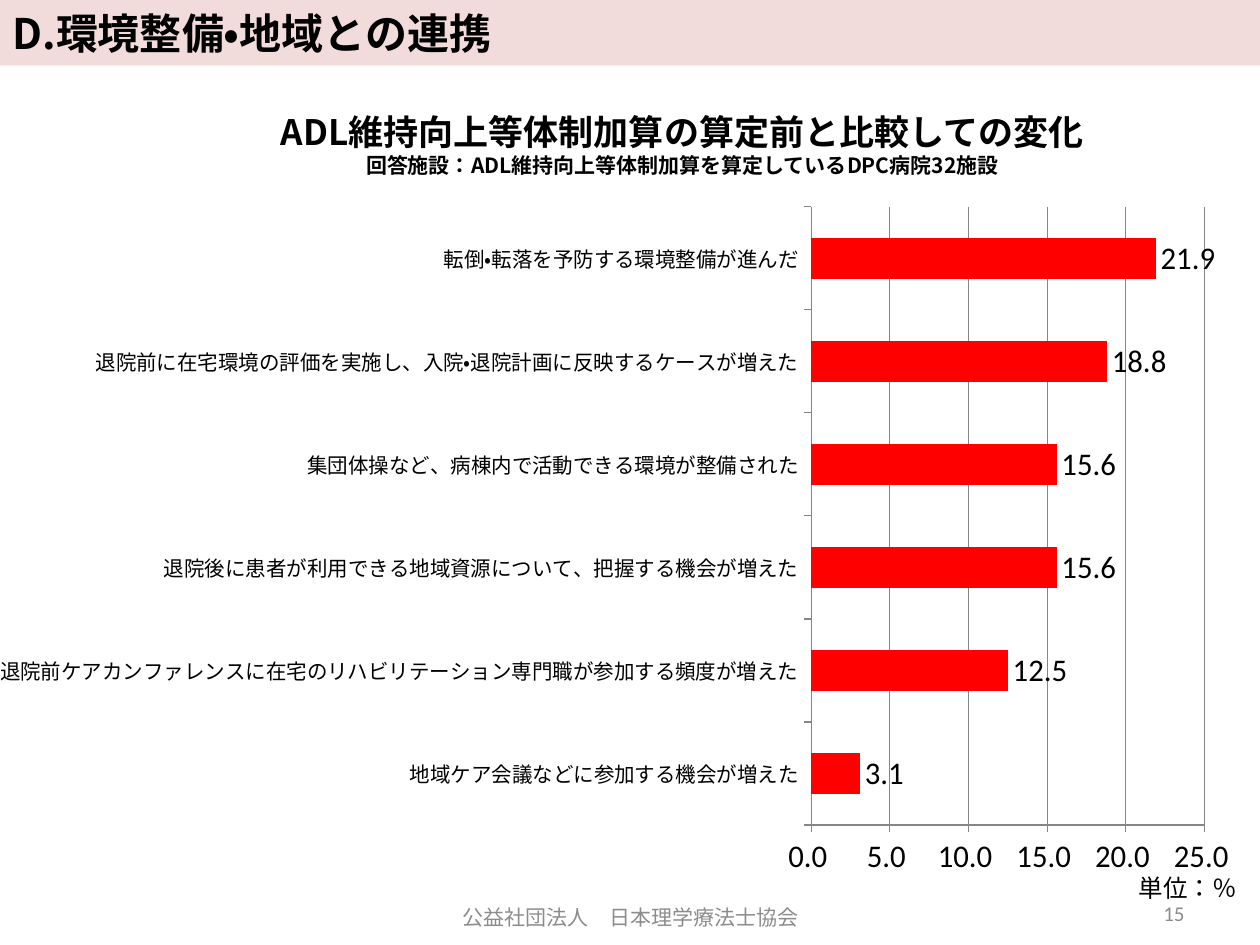
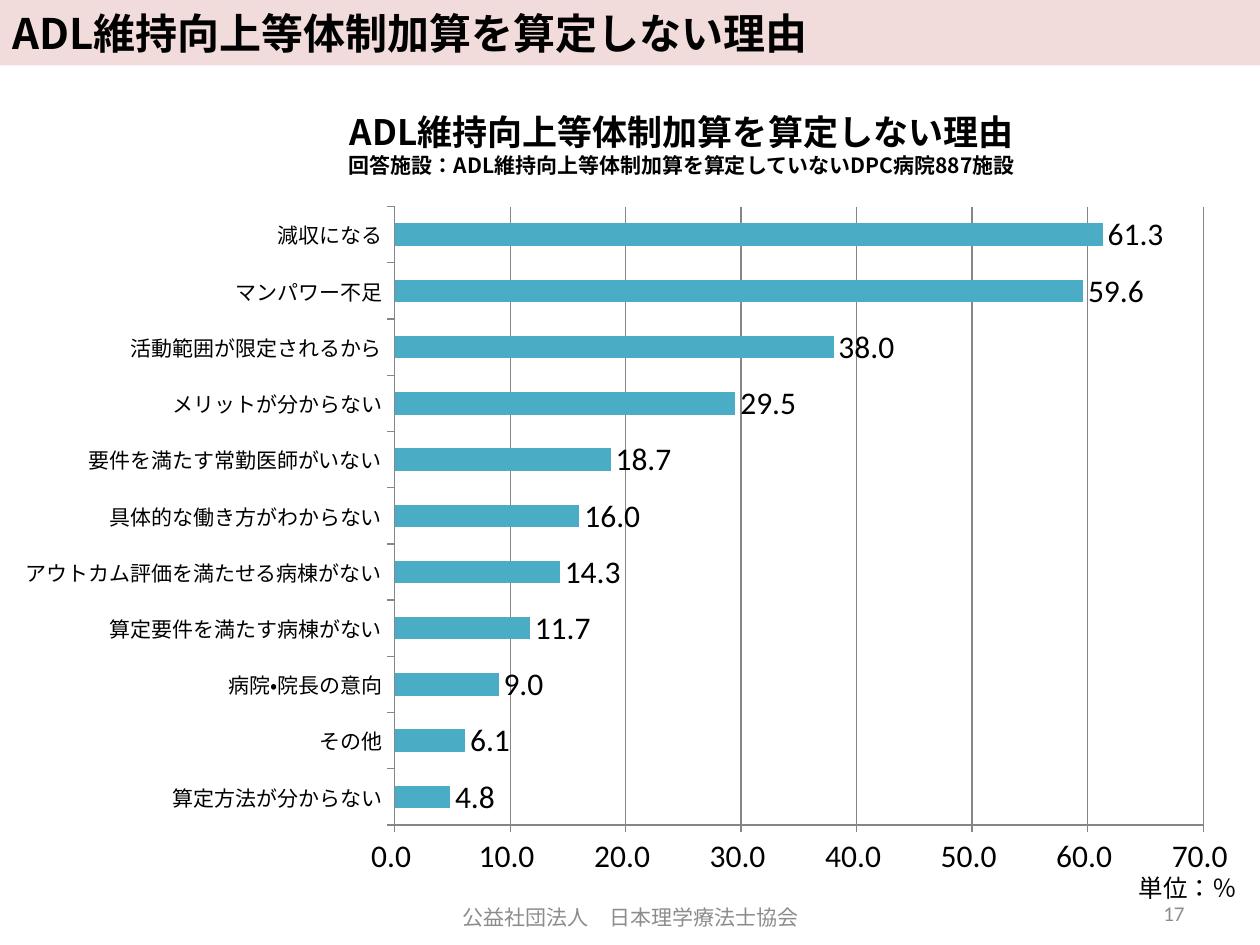
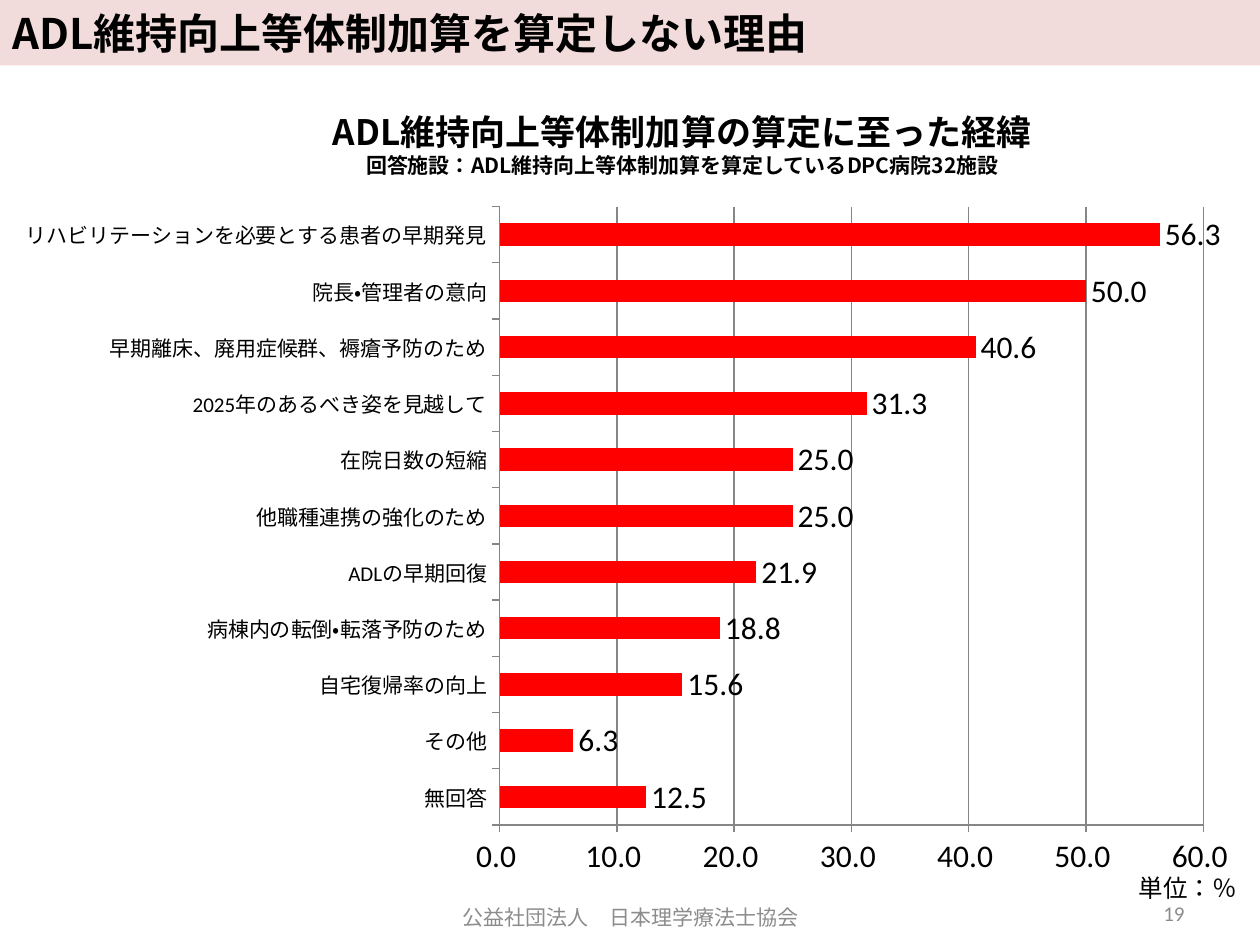
import dataclasses

import pptx
import pptx.chart.data
import pptx.dml.color
import pptx.enum.chart
import pptx.enum.lang
import pptx.enum.shapes
import pptx.enum.text
import pptx.util

Inches = pptx.util.Inches
Align = pptx.enum.text.PP_ALIGN
Anchor = pptx.enum.text.MSO_ANCHOR


@dataclasses.dataclass(frozen=True)
class Theme:
    band: str = "F2DCDB"
    ink: str = "000000"
    muted: str = "8C8C8C"
    grid: str = "868686"
    adopters: str = "FF0000"
    non_adopters: str = "4BACC6"
    heading_font: str = "Noto Sans CJK JP"
    body_font: str = "Calibri"
    title_size: int = 24
    heading_size: int = 20
    chart_size: int = 18
    unit_size: int = 14
    small_size: int = 12


THEME = Theme()
NUMBER_FORMAT = "0.0_ "
UNIT = "単位：％"
FOOTER = "公益社団法人　日本理学療法士協会"
ADOPTERS = "回答施設：ADL維持向上等体制加算を算定しているDPC病院32施設"
NON_ADOPTERS = "回答施設：ADL維持向上等体制加算を算定していないDPC病院887施設"

SLIDES = [
    {
        "title": "D.環境整備・地域との連携",
        "heading": "ADL維持向上等体制加算の算定前と比較しての変化",
        "respondents": ADOPTERS,
        "heading_span": (2.07, 6.69),
        "number": 15,
        "color": THEME.adopters,
        "answers": [
            ("転倒・転落を予防する環境整備が進んだ", 21.9),
            ("退院前に在宅環境の評価を実施し、入院・退院計画に反映するケースが増えた", 18.8),
            ("集団体操など、病棟内で活動できる環境が整備された", 15.6),
            ("退院後に患者が利用できる地域資源について、把握する機会が増えた", 15.6),
            ("退院前ケアカンファレンスに在宅のリハビリテーション専門職が参加する頻度が増えた", 12.5),
            ("地域ケア会議などに参加する機会が増えた", 3.1),
        ],
    },
    {
        "title": "ADL維持向上等体制加算を算定しない理由",
        "heading": "ADL維持向上等体制加算を算定しない理由",
        "respondents": NON_ADOPTERS,
        "heading_span": (2.59, 5.64),
        "number": 17,
        "color": THEME.non_adopters,
        "answers": [
            ("減収になる", 61.3),
            ("マンパワー不足", 59.6),
            ("活動範囲が限定されるから", 38.0),
            ("メリットが分からない", 29.5),
            ("要件を満たす常勤医師がいない", 18.7),
            ("具体的な働き方がわからない", 16.0),
            ("アウトカム評価を満たせる病棟がない", 14.3),
            ("算定要件を満たす病棟がない", 11.7),
            ("病院・院長の意向", 9.0),
            ("その他", 6.1),
            ("算定方法が分からない", 4.8),
        ],
    },
    {
        "title": "ADL維持向上等体制加算を算定しない理由",
        "heading": "ADL維持向上等体制加算の算定に至った経緯",
        "respondents": ADOPTERS,
        "heading_span": (2.49, 5.85),
        "number": 19,
        "color": THEME.adopters,
        "answers": [
            ("リハビリテーションを必要とする患者の早期発見", 56.3),
            ("院長・管理者の意向", 50.0),
            ("早期離床、廃用症候群、褥瘡予防のため", 40.6),
            ("2025年のあるべき姿を見越して", 31.3),
            ("在院日数の短縮", 25.0),
            ("他職種連携の強化のため", 25.0),
            ("ADLの早期回復", 21.9),
            ("病棟内の転倒・転落予防のため", 18.8),
            ("自宅復帰率の向上", 15.6),
            ("その他", 6.3),
            ("無回答", 12.5),
        ],
    },
]


def rgb(value):
    return pptx.dml.color.RGBColor.from_string(value)


def set_attributes(target, values):
    for name, value in values.items():
        setattr(target, name, value)


def format_font(font, size, name, color=THEME.ink, bold=False):
    set_attributes(font, {
        "size": pptx.util.Pt(size),
        "name": name,
        "bold": bold,
        "language_id": pptx.enum.lang.MSO_LANGUAGE_ID.JAPANESE,
    })
    font.color.rgb = rgb(color)


def write(shape, lines, align=Align.LEFT, anchor=Anchor.TOP, wrap=True, **style):
    frame = shape.text_frame
    set_attributes(frame, {"word_wrap": wrap, "vertical_anchor": anchor})
    for index, (text, size) in enumerate(lines):
        paragraph = frame.add_paragraph() if index else frame.paragraphs[0]
        paragraph.alignment = align
        run = paragraph.add_run()
        run.text = text
        format_font(run.font, size, **style)


def add_text(slide, box, lines, **options):
    write(slide.shapes.add_textbox(*map(Inches, box)), lines, **options)


def add_title_band(slide, title):
    band = slide.shapes.add_shape(
        pptx.enum.shapes.MSO_SHAPE.RECTANGLE, *map(Inches, (0, 0, 10, 0.52)))
    band.shadow.inherit = False
    band.fill.solid()
    band.fill.fore_color.rgb = rgb(THEME.band)
    band.line.fill.background()
    write(band, [(title, THEME.title_size)], anchor=Anchor.MIDDLE,
          name=THEME.heading_font, bold=True)


def add_answer_chart(slide, answers, color):
    data = pptx.chart.data.CategoryChartData()
    data.categories = [label for label, _ in reversed(answers)]
    data.add_series("Series 1", [value for _, value in reversed(answers)])
    chart = slide.shapes.add_chart(
        pptx.enum.chart.XL_CHART_TYPE.BAR_CLUSTERED,
        *map(Inches, (0, 1.53, 10, 5.53)), data).chart
    set_attributes(chart, {"has_legend": False, "has_title": False})
    format_font(chart.font, THEME.chart_size, THEME.body_font)

    plot = chart.plots[0]
    set_attributes(plot, {"gap_width": 150, "vary_by_categories": False,
                          "has_data_labels": True})
    set_attributes(plot.data_labels, {
        "show_value": True,
        "number_format": NUMBER_FORMAT,
        "number_format_is_linked": False,
        "position": pptx.enum.chart.XL_LABEL_POSITION.OUTSIDE_END,
    })
    series = plot.series[0]
    series.format.fill.solid()
    series.format.fill.fore_color.rgb = rgb(color)

    categories, values = chart.category_axis, chart.value_axis
    format_font(categories.tick_labels.font, THEME.small_size, THEME.body_font)
    set_attributes(values.tick_labels, {"number_format": NUMBER_FORMAT,
                                        "number_format_is_linked": False})
    for axis in (categories, values):
        set_attributes(axis, {
            "major_tick_mark": pptx.enum.chart.XL_TICK_MARK.OUTSIDE,
            "minor_tick_mark": pptx.enum.chart.XL_TICK_MARK.NONE,
            "has_major_gridlines": axis is values,
        })
    for line in (categories.format.line, values.format.line,
                 values.major_gridlines.format.line):
        line.color.rgb = rgb(THEME.grid)
        line.width = pptx.util.Pt(0.75)


def add_footer(slide, number):
    style = {"anchor": Anchor.MIDDLE, "name": THEME.body_font, "color": THEME.muted}
    add_text(slide, (7.17, 7.05, 2.33, 0.4), [(str(number), THEME.small_size)],
             align=Align.RIGHT, **style)
    add_text(slide, (2.52, 7.08, 4.97, 0.4), [(FOOTER, THEME.small_size)],
             align=Align.CENTER, **style)


def build_slide(presentation, content):
    slide = presentation.slides.add_slide(presentation.slide_layouts[6])
    add_title_band(slide, content["title"])
    add_text(slide, (8.94, 6.88, 0.99, 0.34), [(UNIT, THEME.unit_size)],
             wrap=False, name=THEME.heading_font)
    left, width = content["heading_span"]
    add_text(slide, (left, 0.83, width, 0.64),
             [(content["heading"], THEME.heading_size),
              (content["respondents"], THEME.small_size)],
             align=Align.CENTER, name=THEME.heading_font, bold=True)
    add_answer_chart(slide, content["answers"], content["color"])
    add_footer(slide, content["number"])


def main():
    presentation = pptx.Presentation()
    set_attributes(presentation, {"slide_width": Inches(10),
                                  "slide_height": Inches(7.5)})
    for content in SLIDES:
        build_slide(presentation, content)
    presentation.save("out.pptx")


if __name__ == "__main__":
    main()
